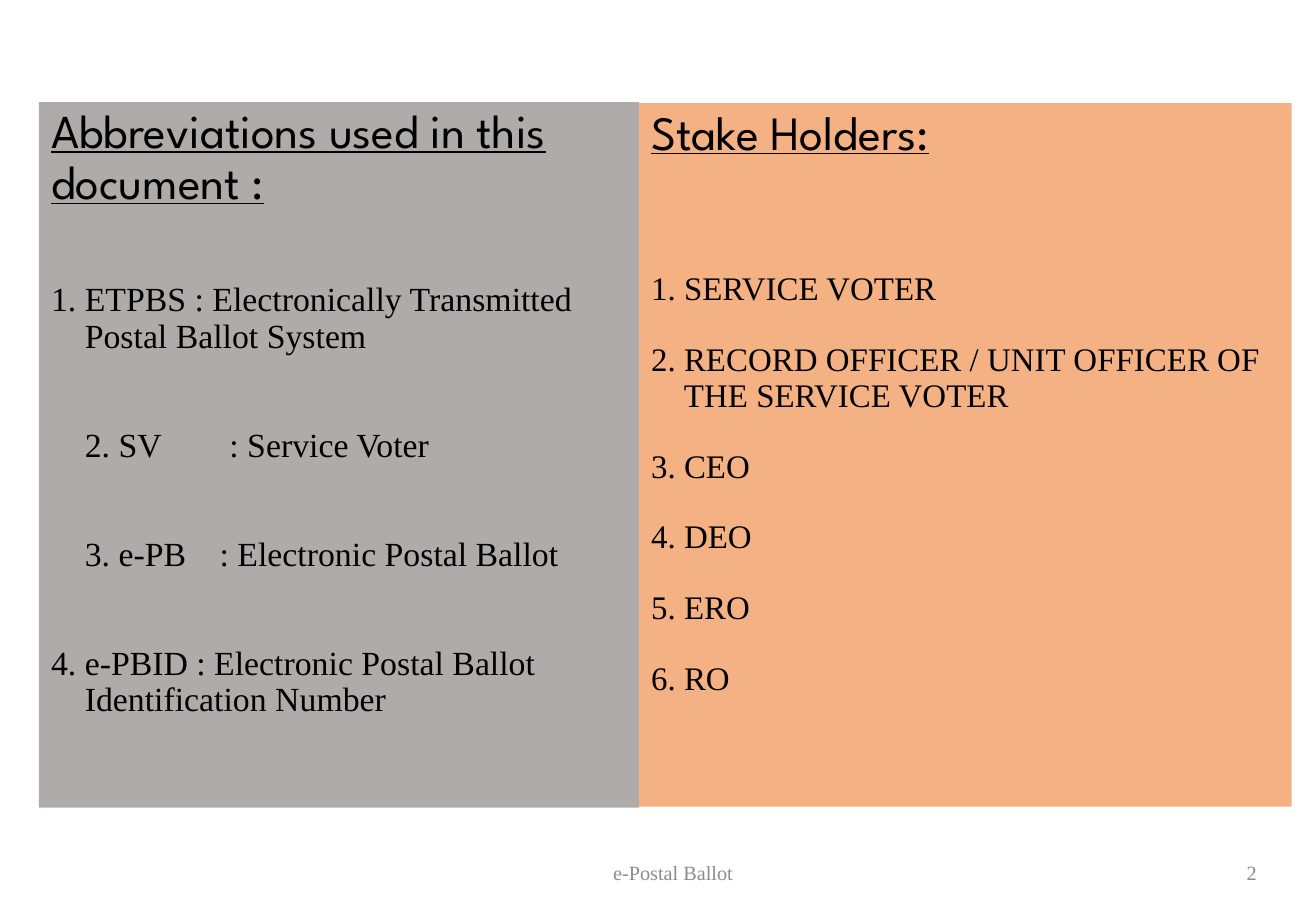
import pptx
import pptx.util
import pptx.dml.color
import pptx.enum.shapes
import pptx.enum.text

Inches, Pt = pptx.util.Inches, pptx.util.Pt
RGBColor = pptx.dml.color.RGBColor
PP_ALIGN, MSO_ANCHOR = pptx.enum.text.PP_ALIGN, pptx.enum.text.MSO_ANCHOR

BLACK = RGBColor(0x00, 0x00, 0x00)
MUTED = RGBColor(0x8C, 0x8C, 0x8C)
GREY = RGBColor(0xAF, 0xAB, 0xAB)
ORANGE = RGBColor(0xF4, 0xB1, 0x83)
HEAD_FONT, BODY_FONT = "League Spartan", "Times New Roman"

# Content
ABBREVIATIONS = {
    "heading": "Abbreviations used in this document :",
    "items": [
        "1. ETPBS : Electronically Transmitted Postal Ballot System",
        "2. SV\t: Service Voter",
        "3. e-PB\t: Electronic Postal Ballot",
        "4. e-PBID : Electronic Postal Ballot Identification Number",
    ],
    "box": (0.32, 0.84, 4.94, 5.81), "fill": GREY,
    "head_size": 28, "size": 20, "first_gap": 43, "gap": 43,
    "tabs": [1.19, 1.11],
}
STAKEHOLDERS = {
    "heading": "Stake Holders:",
    "items": [
        "1. SERVICE VOTER",
        "2. RECORD OFFICER / UNIT OFFICER OF THE SERVICE VOTER",
        "3. CEO", "4. DEO", "5. ERO", "6. RO",
    ],
    "box": (5.26, 0.85, 5.37, 5.79), "fill": ORANGE,
    "head_size": 28.3, "size": 19.5, "first_gap": 66, "gap": 21,
    "tabs": [],
}
FOOTERS = [
    ("e-Postal Ballot", (3.31, 6.95, 4.46, 0.47), PP_ALIGN.CENTER),
    ("2", (7.46, 6.95, 2.98, 0.47), PP_ALIGN.RIGHT),
]


def add_text(p, text, **font):
    r = p.add_run()
    r.text = text
    r.font.color.rgb = font.pop("color", BLACK)
    for name, value in font.items():
        setattr(r.font, name, value)


def set_tab(pPr, inches):
    tabs = pPr.makeelement(pptx.oxml.ns.qn("a:tabLst"), {})
    tab = tabs.makeelement(pptx.oxml.ns.qn("a:tab"),
                           {"pos": str(Inches(inches)), "algn": "l"})
    tabs.append(tab)
    pPr.append(tabs)


def fill_panel(sp, panel):
    sp.left, sp.top, sp.width, sp.height = map(Inches, panel["box"])
    sp.fill.solid()
    sp.fill.fore_color.rgb = panel["fill"]
    sp.line.fill.background()
    tf = sp.text_frame
    frame = {"word_wrap": True, "vertical_anchor": MSO_ANCHOR.TOP,
             "auto_size": pptx.enum.text.MSO_AUTO_SIZE.NONE}
    for name, value in frame.items():
        setattr(tf, name, value)

    # Heading
    p = tf.paragraphs[0]
    p.alignment, p.line_spacing = PP_ALIGN.LEFT, 0.9
    add_text(p, panel["heading"], name=HEAD_FONT,
             size=Pt(panel["head_size"]), underline=True)

    # Numbered items: a tab aligns the colon, other items hang after the number
    tabs = iter(panel["tabs"])
    for i, item in enumerate(panel["items"]):
        p = tf.add_paragraph()
        p.alignment, p.line_spacing = PP_ALIGN.LEFT, 0.9
        p.space_before = Pt(panel["gap"] if i else panel["first_gap"])
        pPr = p._p.get_or_add_pPr()
        if "\t" in item:
            set_tab(pPr, next(tabs))
        else:
            hang = Pt(panel["size"])
            pPr.set("marL", str(hang))
            pPr.set("indent", str(-hang))
        add_text(p, item, name=BODY_FONT, size=Pt(panel["size"]), underline=False)


prs = pptx.Presentation()
prs.slide_width, prs.slide_height = Inches(10.83), Inches(7.5)
s = prs.slides.add_slide(prs.slide_layouts[5])

# Left panel is the title, right panel a rectangle
fill_panel(s.shapes.title, ABBREVIATIONS)
sp = s.shapes.add_shape(pptx.enum.shapes.MSO_SHAPE.RECTANGLE,
                        *map(Inches, STAKEHOLDERS["box"]))
sp.shadow.inherit = False
fill_panel(sp, STAKEHOLDERS)

# Footer and page number
for text, box, align in FOOTERS:
    tf = s.shapes.add_textbox(*map(Inches, box)).text_frame
    tf.word_wrap, tf.vertical_anchor = True, MSO_ANCHOR.MIDDLE
    p = tf.paragraphs[0]
    p.alignment = align
    add_text(p, text, name=BODY_FONT, size=Pt(12), color=MUTED)

prs.save("out.pptx")
